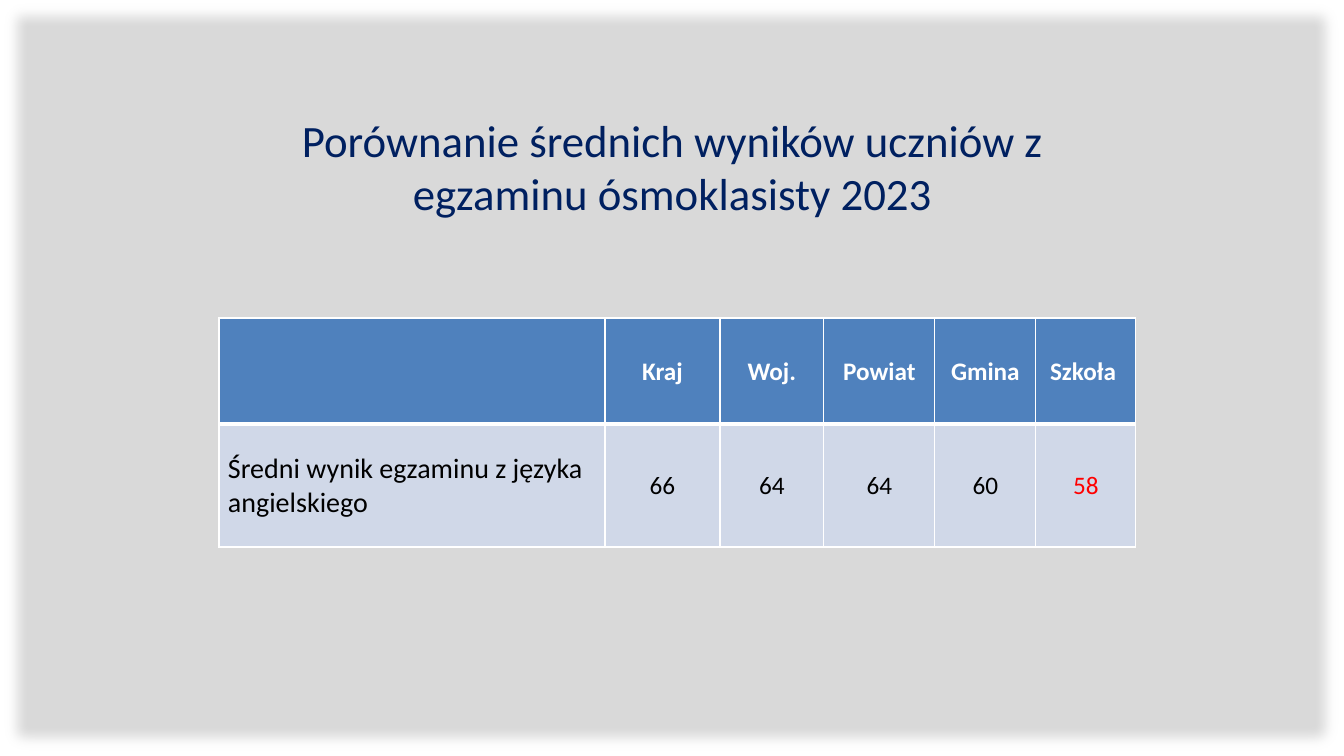
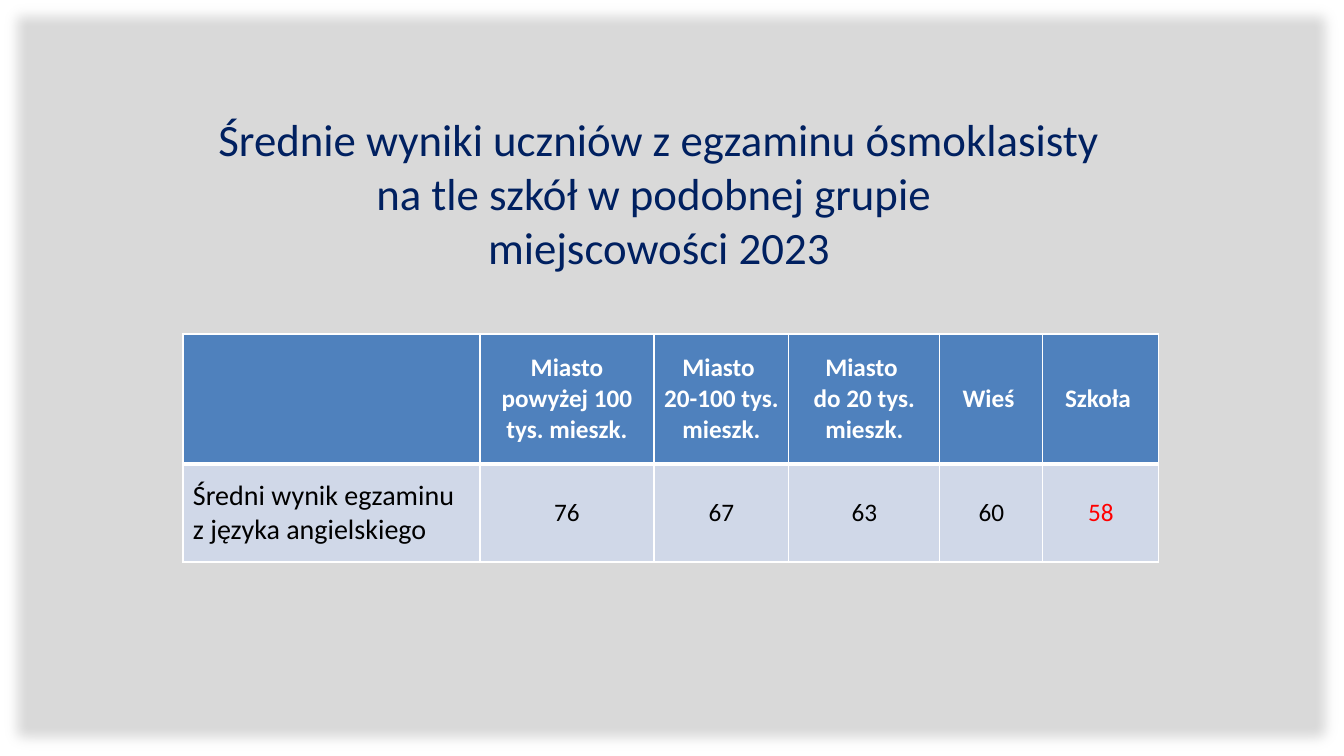
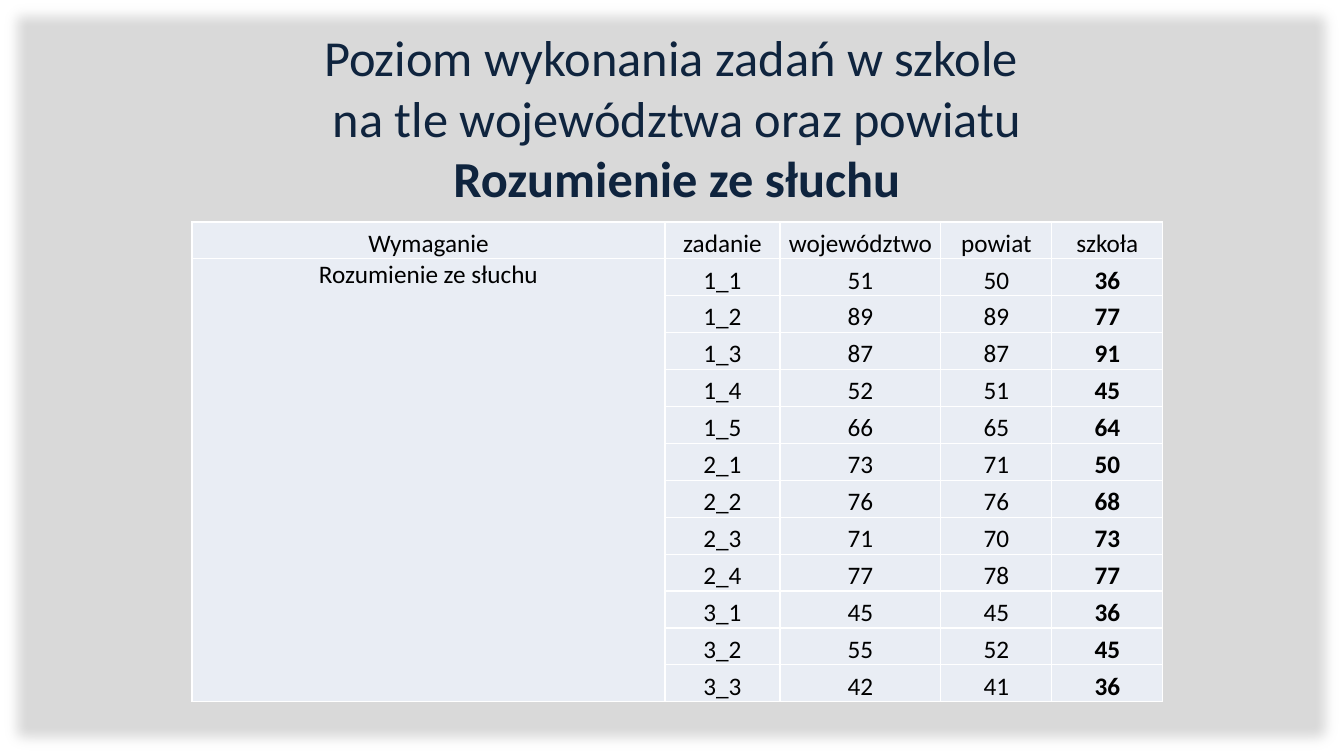
from lxml.etree import SubElement
from pptx import Presentation
from pptx.dml.color import RGBColor
from pptx.enum.shapes import MSO_SHAPE
from pptx.enum.text import MSO_ANCHOR, PP_ALIGN
from pptx.oxml.ns import qn
from pptx.util import Emu, Pt

FONT = "Calibri"
WHITE = RGBColor(0xFF, 0xFF, 0xFF)
BLACK = RGBColor(0, 0, 0)
RED = RGBColor(0xFF, 0, 0)
GREY = RGBColor(0xD9, 0xD9, 0xD9)
NAVY = RGBColor(0x00, 0x20, 0x60)
DARK_NAVY = RGBColor(0x0F, 0x24, 0x3E)
HEADER_BLUE = RGBColor(0x4F, 0x81, 0xBD)
ROW_BLUE = RGBColor(0xD0, 0xD8, 0xE8)
PALE_BLUE = RGBColor(0xE9, 0xED, 0xF4)

SCALE = 914400 / 100.8
WIDTH, HEIGHT = 1344, 756
SOFT_EDGE = 14
TIGHT = (1, 1, 1, 0)
LABEL = (9, 1, 1, 0)
NORMAL = (10, 5, 10, 5)

SUMMARIES = [
    {
        "title": ["Porównanie średnich wyników uczniów z egzaminu ósmoklasisty 2023"],
        "title_box": (219, 103, 907, 126),
        "corner": (219, 318),
        "columns": [386, 115, 104, 111, 101, 100],
        "rows": [106, 123],
        "margins": (LABEL, TIGHT),
        "header": ["", "Kraj", "Woj.", "Powiat", "Gmina", "Szkoła "],
        "results": ["Średni wynik egzaminu z języka angielskiego", 66, 64, 64, 60, 58],
    },
    {
        "title": [
            "Średnie wyniki uczniów z egzaminu ósmoklasisty na tle szkół w podobnej grupie ",
            "miejscowości 2023",
        ],
        "title_box": (204, 110, 910, 165),
        "corner": (183, 334),
        "columns": [297, 174, 135, 151, 103, 116],
        "rows": [130, 98],
        "margins": (NORMAL, NORMAL),
        "header": [
            "", "Miasto powyżej 100 tys. mieszk.", "Miasto \n20-100 tys. mieszk.",
            "Miasto \ndo 20 tys. mieszk.", "Wieś ", "Szkoła ",
        ],
        "results": ["Średni wynik egzaminu z języka angielskiego", 76, 67, 63, 60, 58],
    },
]

SKILL = "Rozumienie ze słuchu"
TASK_TITLE = ["Poziom wykonania zadań w szkole ", "na tle województwa oraz powiatu", SKILL]
TASK_HEADER = ["Wymaganie", "zadanie", "województwo", "powiat", "szkoła"]
TASK_COLUMNS = [473, 115, 161, 111, 111]
TASK_TABLE_HEIGHT = 480
TASKS = [
    ("1_1", 51, 50, 36), ("1_2", 89, 89, 77), ("1_3", 87, 87, 91), ("1_4", 52, 51, 45),
    ("1_5", 66, 65, 64), ("2_1", 73, 71, 50), ("2_2", 76, 76, 68), ("2_3", 71, 70, 73),
    ("2_4", 77, 78, 77), ("3_1", 45, 45, 36), ("3_2", 55, 52, 45), ("3_3", 42, 41, 36),
]


def px(length):
    return Emu(round(length * SCALE))


def write(frame, lines, size=18, color=BLACK, bold_lines=(), align=PP_ALIGN.CENTER):
    paragraph = frame.paragraphs[0]
    paragraph.alignment = align
    for index, line in enumerate(lines):
        if index:
            paragraph.add_line_break()
        run = paragraph.add_run()
        run.text = line
        run.font.name = FONT
        run.font.size = Pt(size)
        run.font.color.rgb = color
        run.font.bold = index in bold_lines


def add_slide(presentation):
    slide = presentation.slides.add_slide(presentation.slide_layouts[6])
    panel = slide.shapes.add_shape(MSO_SHAPE.RECTANGLE, 0, 0, px(WIDTH), px(HEIGHT))
    panel.fill.solid()
    panel.fill.fore_color.rgb = GREY
    panel.line.fill.background()
    panel.shadow.inherit = False
    effects = panel._element.spPr.find(qn("a:effectLst"))
    SubElement(effects, qn("a:softEdge"), rad=str(px(SOFT_EDGE)))
    return slide


def add_title(slide, box, lines, **text_format):
    frame = slide.shapes.add_textbox(*map(px, box)).text_frame
    frame.word_wrap = True
    frame.vertical_anchor = MSO_ANCHOR.MIDDLE
    write(frame, lines, **text_format)


def add_table(slide, corner, columns, rows):
    size = (sum(columns), sum(rows))
    frame = slide.shapes.add_table(len(rows), len(columns), *map(px, corner + size))
    table = frame.table
    table.first_row = table.horz_banding = False
    for column, width in zip(table.columns, columns):
        column.width = px(width)
    for row, height in zip(table.rows, rows):
        row.height = px(height)
    return table


def style_cell(cell, fill, margins, anchor, top=1, bottom=1):
    properties = cell._tc.get_or_add_tcPr()
    for side, width in (("L", 1), ("R", 1), ("T", top), ("B", bottom)):
        line = SubElement(properties, qn(f"a:ln{side}"), w=str(Pt(width)))
        SubElement(SubElement(line, qn("a:solidFill")), qn("a:srgbClr"), val=str(WHITE))
    cell.fill.solid()
    cell.fill.fore_color.rgb = fill
    cell.margin_left, cell.margin_top, cell.margin_right, cell.margin_bottom = map(px, margins)
    cell.vertical_anchor = anchor


def build_summary(presentation, content):
    slide = add_slide(presentation)
    add_title(slide, content["title_box"], content["title"], size=32, color=NAVY)
    table = add_table(slide, content["corner"], content["columns"], content["rows"])
    label_margins, value_margins = content["margins"]
    last = len(content["columns"]) - 1
    for index, (heading, result) in enumerate(zip(content["header"], content["results"])):
        header_cell, result_cell = table.cell(0, index), table.cell(1, index)
        style_cell(header_cell, HEADER_BLUE, value_margins, MSO_ANCHOR.MIDDLE, bottom=3)
        style_cell(result_cell, ROW_BLUE, value_margins if index else label_margins,
                   MSO_ANCHOR.MIDDLE, top=3)
        if heading:
            lines = heading.split("\n")
            write(header_cell.text_frame, lines, color=WHITE, bold_lines=range(len(lines)))
        write(result_cell.text_frame, [str(result)],
              size=18 if index else 20,
              color=RED if index == last else BLACK,
              align=PP_ALIGN.CENTER if index else PP_ALIGN.LEFT)


def build_tasks(presentation):
    slide = add_slide(presentation)
    add_title(slide, (181, 54, 992, 126), TASK_TITLE, size=36, color=DARK_NAVY, bold_lines=[2])
    records = [TASK_HEADER] + [(SKILL if index == 0 else "", *task)
                               for index, task in enumerate(TASKS)]
    heights = [TASK_TABLE_HEIGHT / len(records)] * len(records)
    table = add_table(slide, (192, 222), TASK_COLUMNS, heights)
    table.cell(1, 0).merge(table.cell(len(TASKS), 0))
    last = len(TASK_COLUMNS) - 1
    for row, record in enumerate(records):
        for column, value in enumerate(record):
            cell = table.cell(row, column)
            is_skill = row > 0 and column == 0
            style_cell(cell, PALE_BLUE, TIGHT, MSO_ANCHOR.TOP if is_skill else MSO_ANCHOR.BOTTOM)
            if value != "":
                write(cell.text_frame, [str(value)],
                      bold_lines=[0] if row and column == last else [])


def main():
    presentation = Presentation()
    presentation.slide_width, presentation.slide_height = px(WIDTH), px(HEIGHT)
    for content in SUMMARIES:
        build_summary(presentation, content)
    build_tasks(presentation)
    presentation.save("out.pptx")


if __name__ == "__main__":
    main()
